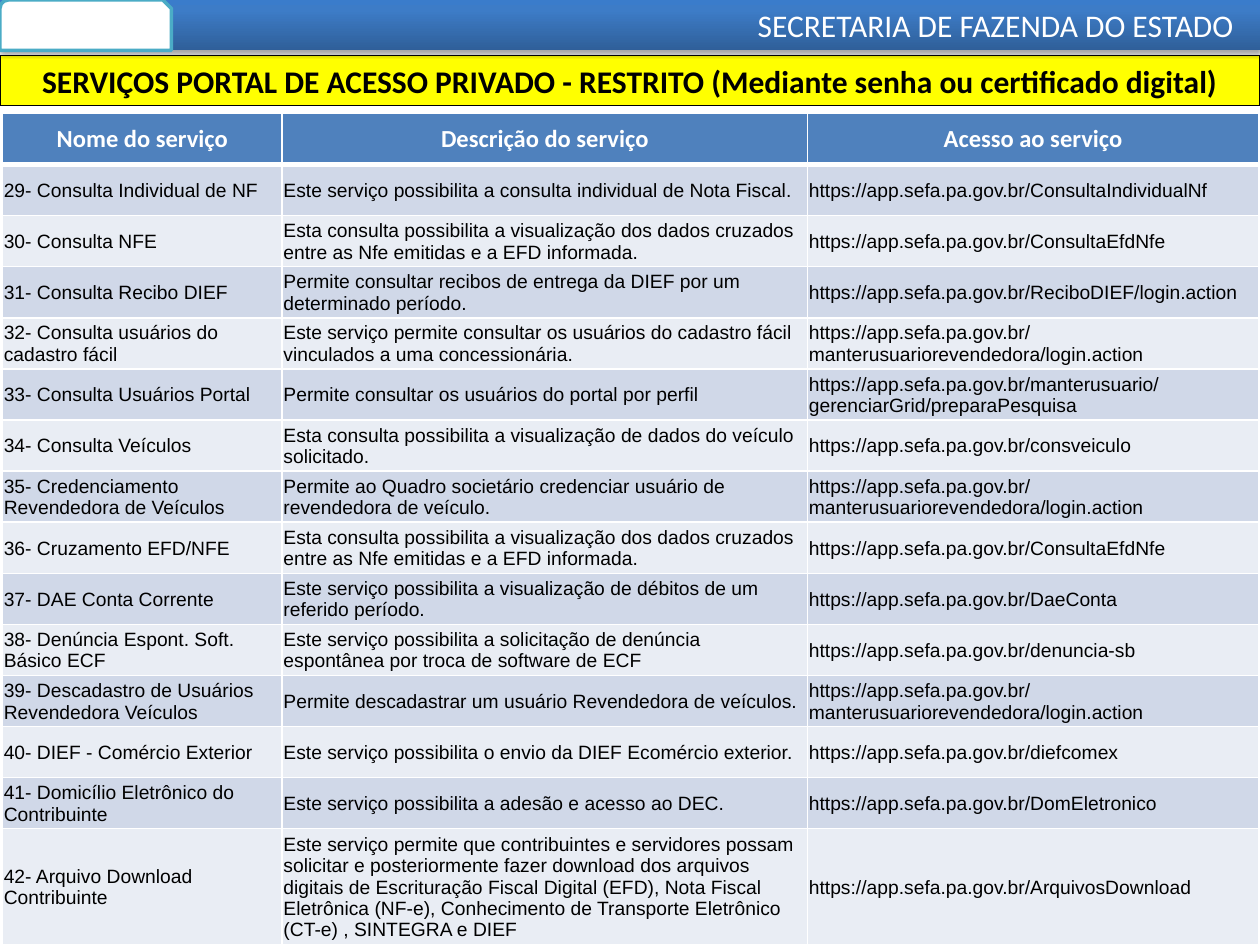
from copy import deepcopy

from lxml import etree
from pptx import Presentation
from pptx.dml.color import RGBColor
from pptx.enum.shapes import MSO_SHAPE
from pptx.enum.text import MSO_ANCHOR, MSO_AUTO_SIZE, PP_ALIGN
from pptx.oxml.ns import qn
from pptx.util import Inches, Pt

WHITE = RGBColor(0xFF, 0xFF, 0xFF)
BLACK = RGBColor(0x00, 0x00, 0x00)
YELLOW = RGBColor(0xFF, 0xFF, 0x00)
TEAL = RGBColor(0x4B, 0xAC, 0xC6)
HEADER_BLUE = RGBColor(0x4F, 0x81, 0xBD)
BAND_DARK = RGBColor(0xD0, 0xD8, 0xE8)
BAND_LIGHT = RGBColor(0xE9, 0xED, 0xF4)
GRADIENT = [
    (0, RGBColor(0x2F, 0x5F, 0x99)),
    (0.8, RGBColor(0x3D, 0x7C, 0xC7)),
    (1, RGBColor(0x3A, 0x7C, 0xCB)),
]

COLUMN_WIDTHS = [2.22, 4.17, 3.58]
LAST_ROW_HEIGHT = 0.92
HEADINGS = ("Nome do serviço", "Descrição do serviço", "Acesso ao serviço")
SITE = "https://app.sefa.pa.gov.br/"
FIRST_NUMBER = 29
SERVICES = [
    ("Consulta Individual de NF",
     "Este serviço possibilita a consulta individual de Nota Fiscal.",
     "ConsultaIndividualNf"),
    ("Consulta NFE",
     "Esta consulta possibilita a visualização dos dados cruzados entre as Nfe emitidas e a EFD informada.",
     "ConsultaEfdNfe"),
    ("Consulta Recibo DIEF",
     "Permite consultar recibos de entrega da DIEF por um determinado período.",
     "ReciboDIEF/login.action"),
    ("Consulta usuários do cadastro fácil",
     "Este serviço permite consultar os usuários do cadastro fácil vinculados a uma concessionária.",
     "manterusuariorevendedora/login.action"),
    ("Consulta Usuários Portal",
     "Permite consultar os usuários do portal por perfil",
     "manterusuario/gerenciarGrid/preparaPesquisa"),
    ("Consulta Veículos",
     "Esta consulta possibilita a visualização de dados do veículo solicitado.",
     "consveiculo"),
    ("Credenciamento Revendedora de Veículos",
     "Permite ao Quadro societário credenciar usuário de revendedora de veículo.",
     "manterusuariorevendedora/login.action"),
    ("Cruzamento EFD/NFE",
     "Esta consulta possibilita a visualização dos dados cruzados entre as Nfe emitidas e a EFD informada.",
     "ConsultaEfdNfe"),
    ("DAE Conta Corrente",
     "Este serviço possibilita a visualização de débitos de um referido período.",
     "DaeConta"),
    ("Denúncia Espont. Soft. Básico ECF",
     "Este serviço possibilita a solicitação de denúncia espontânea por troca de software de ECF",
     "denuncia-sb"),
    ("Descadastro de Usuários Revendedora Veículos",
     "Permite descadastrar um usuário Revendedora de veículos.",
     "manterusuariorevendedora/login.action"),
    ("DIEF - Comércio Exterior",
     "Este serviço possibilita o envio da DIEF Ecomércio exterior.",
     "diefcomex"),
    ("Domicílio Eletrônico do Contribuinte",
     "Este serviço possibilita a adesão e acesso ao DEC.",
     "DomEletronico"),
    ("Arquivo Download Contribuinte",
     "Este serviço permite que contribuintes e servidores possam solicitar e posteriormente fazer "
     "download dos arquivos digitais de Escrituração Fiscal Digital (EFD), Nota Fiscal Eletrônica "
     "(NF-e), Conhecimento de Transporte Eletrônico (CT-e) , SINTEGRA e DIEF",
     "ArquivosDownload"),
]


def write_text(text_frame, text, size=11, font="Arial", color=BLACK, bold=False,
               align=PP_ALIGN.LEFT):
    text_frame.word_wrap = True
    paragraph = text_frame.paragraphs[0]
    paragraph.alignment = align
    run = paragraph.add_run()
    run.text = text
    run.font.size = Pt(size)
    run.font.name = font
    run.font.bold = bold
    run.font.color.rgb = color


def fill_gradient(shape):
    shape.fill.gradient()
    shape.fill.gradient_angle = 90
    stop_list = shape._element.spPr.find(qn("a:gradFill")).find(qn("a:gsLst"))
    stop_list.append(deepcopy(stop_list[0]))
    for stop, (position, color) in zip(shape.fill.gradient_stops, GRADIENT):
        stop.position = position
        stop.color.rgb = color


def add_soft_shadow(shape):
    shape.shadow.inherit = False
    effects = shape._element.spPr.find(qn("a:effectLst"))
    shadow = etree.SubElement(effects, qn("a:outerShdw"), blurRad=str(Pt(3.1)),
                              dist=str(Pt(1.8)), dir="5400000", rotWithShape="0")
    color = etree.SubElement(shadow, qn("a:srgbClr"), val=str(BLACK))
    etree.SubElement(color, qn("a:alpha"), val="35000")


def add_header(slide, left, top, width, height):
    bar = slide.shapes.add_shape(MSO_SHAPE.RECTANGLE, left, top, width, height)
    fill_gradient(bar)
    add_soft_shadow(bar)
    bar.line.fill.background()
    bar.text_frame.margin_right = Inches(0.21)
    bar.text_frame.vertical_anchor = MSO_ANCHOR.MIDDLE
    write_text(bar.text_frame, "SECRETARIA DE FAZENDA DO ESTADO", size=18,
               font="Calibri", color=WHITE, align=PP_ALIGN.RIGHT)

    plate = slide.shapes.add_shape(MSO_SHAPE.SNIP_ROUND_RECTANGLE, left, top,
                                   Inches(1.36), height)
    plate.shadow.inherit = False
    plate.fill.solid()
    plate.fill.fore_color.rgb = WHITE
    plate.line.color.rgb = TEAL
    plate.line.width = Pt(2)


def format_title(slide, left, top, width, height):
    title = slide.shapes.title
    title.left, title.top, title.width, title.height = left, top, width, height
    title.fill.solid()
    title.fill.fore_color.rgb = YELLOW
    title.line.color.rgb = BLACK
    title.line.width = Pt(0.75)
    title.text_frame.auto_size = MSO_AUTO_SIZE.NONE
    title.text_frame.vertical_anchor = MSO_ANCHOR.MIDDLE
    write_text(title.text_frame,
               "SERVIÇOS PORTAL DE ACESSO PRIVADO - RESTRITO (Mediante senha ou certificado digital)",
               size=18, font="Calibri", bold=True, align=PP_ALIGN.CENTER)


def set_borders(cell, bottom_width):
    properties = cell._tc.get_or_add_tcPr()
    widths = {"a:lnL": 1, "a:lnR": 1, "a:lnT": 1, "a:lnB": bottom_width}
    for index, (tag, width) in enumerate(widths.items()):
        line = etree.Element(qn(tag), w=str(Pt(width)))
        fill = etree.SubElement(line, qn("a:solidFill"))
        etree.SubElement(fill, qn("a:srgbClr"), val=str(WHITE))
        properties.insert(index, line)


def fill_cell(cell, text, fill, bottom_width=1, **text_format):
    cell.margin_left = cell.margin_top = cell.margin_right = Inches(0.01)
    cell.margin_bottom = 0
    cell.vertical_anchor = MSO_ANCHOR.MIDDLE
    cell.fill.solid()
    cell.fill.fore_color.rgb = fill
    set_borders(cell, bottom_width)
    write_text(cell.text_frame, text, **text_format)


def add_services_table(slide, left, top, width, height):
    table = slide.shapes.add_table(len(SERVICES) + 1, len(HEADINGS),
                                   left, top, width, height).table
    for column, column_width in zip(table.columns, COLUMN_WIDTHS):
        column.width = Inches(column_width)
    for row in table.rows:
        row.height = int((height - Inches(LAST_ROW_HEIGHT)) / len(SERVICES))
    table.rows[len(SERVICES)].height = Inches(LAST_ROW_HEIGHT)

    for column, heading in enumerate(HEADINGS):
        fill_cell(table.cell(0, column), heading, HEADER_BLUE, bottom_width=3, size=14,
                  font="Calibri", color=WHITE, bold=True, align=PP_ALIGN.CENTER)
    for row, (name, description, address) in enumerate(SERVICES, start=1):
        band = BAND_DARK if row % 2 else BAND_LIGHT
        texts = (f"{FIRST_NUMBER + row - 1}- {name}", description, SITE + address)
        for column, text in enumerate(texts):
            fill_cell(table.cell(row, column), text, band)


def main():
    presentation = Presentation()
    presentation.slide_width = Inches(10)
    presentation.slide_height = Inches(7.5)
    slide = presentation.slides.add_slide(presentation.slide_layouts[5])
    add_header(slide, 0, 0, Inches(10), Inches(0.4))
    add_services_table(slide, Inches(0.02), Inches(0.9), Inches(9.98), Inches(6.6))
    format_title(slide, 0, Inches(0.44), Inches(10), Inches(0.4))
    presentation.save("out.pptx")


if __name__ == "__main__":
    main()
